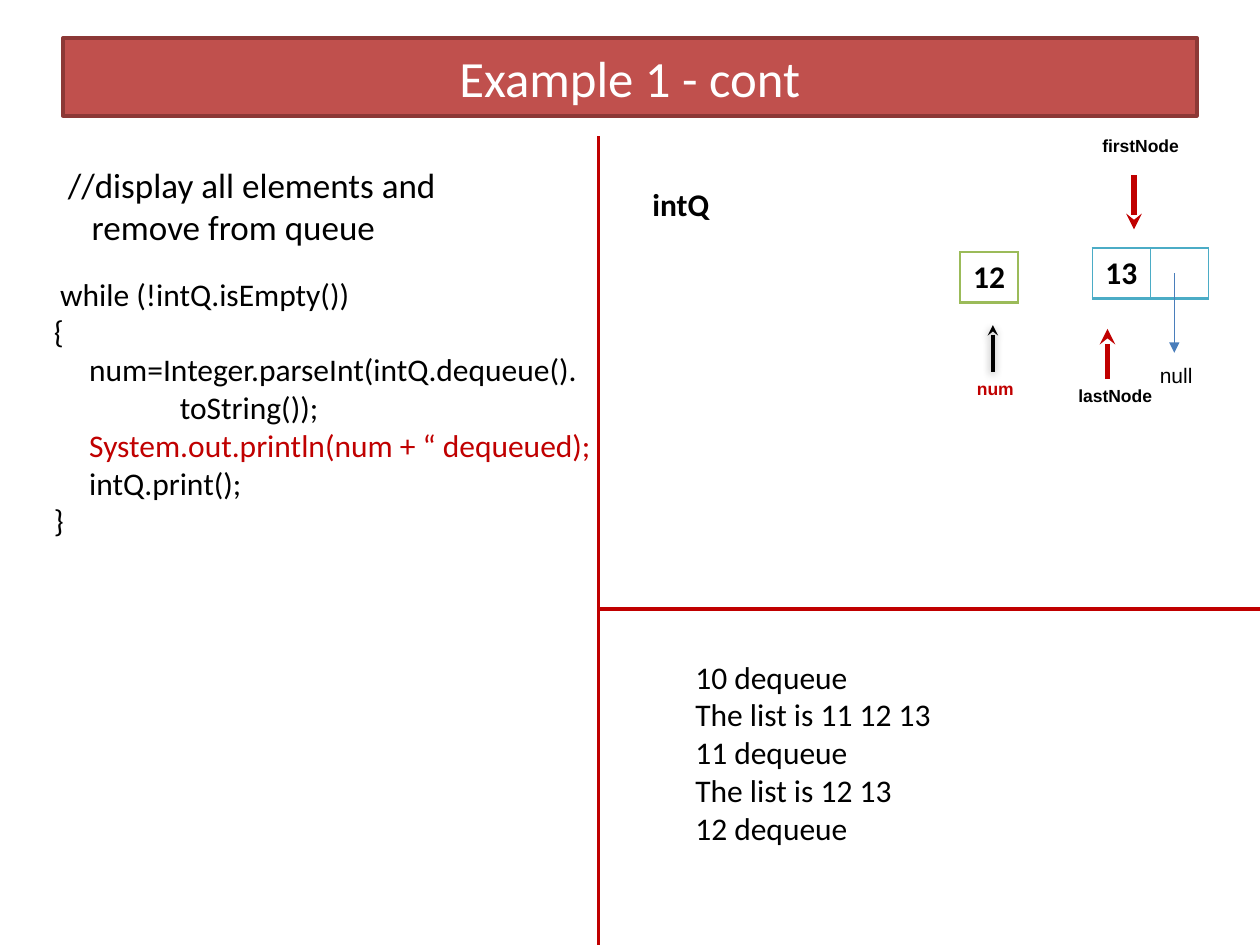
from lxml.etree import SubElement
from pptx import Presentation
from pptx.dml.color import RGBColor
from pptx.enum.shapes import MSO_CONNECTOR, MSO_SHAPE
from pptx.enum.text import MSO_ANCHOR, PP_ALIGN
from pptx.oxml import parse_xml
from pptx.oxml.ns import nsdecls, qn
from pptx.util import Inches, Pt

COLORS = {
    "title": "C0504D", "title_line": "8C3836", "white": "FFFFFF",
    "black": "000000", "red": "C00000", "blue": "4A7EBB",
    "node": "4BACC6", "removed": "9BBB59",
}
CELL_W, CELL_H = 0.46, 0.4


def rgb(name):
    return RGBColor.from_string(COLORS[name])


def style(p, size, color="black", bold=False, font="Calibri", align=PP_ALIGN.LEFT):
    p.alignment = align
    for r in p.runs:
        r.font.name, r.font.size, r.font.bold = font, Pt(size), bold
        r.font.color.rgb = rgb(color)


def indent(p, left, first=0.0):
    pPr = p._p.get_or_add_pPr()
    pPr.set("marL", str(Inches(left)))
    pPr.set("indent", str(Inches(first)))


def add_text(s, x, y, w, h, text, size, wrap=False, **look):
    sp = s.shapes.add_textbox(Inches(x), Inches(y), Inches(w), Inches(h))
    tf = sp.text_frame
    tf.word_wrap = wrap
    tf.text = text
    for p in tf.paragraphs:
        style(p, size, **look)
    return tf


def add_label(s, x, y, w, text, **look):
    add_text(s, x, y, w, 0.27, text, 10, bold=True, font="Arial", **look)


def add_line(s, x1, y1, x2, y2, color, width, head=None, shadow=False):
    ln = s.shapes.add_connector(MSO_CONNECTOR.STRAIGHT, Inches(x1), Inches(y1),
                                Inches(x2), Inches(y2))
    ln.line.color.rgb = rgb(color)
    ln.line.width = Pt(width)
    if head:
        SubElement(ln.line._get_or_add_ln(), qn("a:tailEnd"), type=head)
    effects = SubElement(ln._element.spPr, qn("a:effectLst"))
    if shadow:
        outer = SubElement(effects, qn("a:outerShdw"), blurRad=str(Pt(5)),
                           dist=str(Pt(1.6)), dir="5400000", rotWithShape="0")
        clr = SubElement(outer, qn("a:srgbClr"), val=COLORS["black"])
        SubElement(clr, qn("a:alpha"), val="38000")


def set_borders(cell, color):
    tcPr = cell._tc.get_or_add_tcPr()
    for i, (side, width) in enumerate((("L", 1), ("R", 1), ("T", 1), ("B", 2))):
        tcPr.insert(i, parse_xml(
            f'<a:ln{side} {nsdecls("a")} w="{Pt(width)}"><a:solidFill>'
            f'<a:srgbClr val="{COLORS[color]}"/></a:solidFill></a:ln{side}>'))


def add_node(s, x, y, values, color):
    """A queue node: one row with a cell for each value."""
    tbl = s.shapes.add_table(1, len(values), Inches(x), Inches(y),
                             Inches(CELL_W * len(values)), Inches(CELL_H)).table
    tbl.first_row = tbl.horz_banding = False
    for i, value in enumerate(values):
        tbl.columns[i].width = Inches(CELL_W)
        cell = tbl.cell(0, i)
        cell.fill.background()
        set_borders(cell, color)
        cell.text = value
        style(cell.text_frame.paragraphs[0], 18, bold=True, align=PP_ALIGN.CENTER)


def add_title(s, x, y, w, h):
    sp = s.shapes.add_shape(MSO_SHAPE.RECTANGLE, Inches(x), Inches(y),
                            Inches(w), Inches(h))
    sp.shadow.inherit = False
    sp.fill.solid()
    sp.fill.fore_color.rgb = rgb("title")
    sp.line.color.rgb = rgb("title_line")
    sp.line.width = Pt(2)
    tf = sp.text_frame
    tf.vertical_anchor = MSO_ANCHOR.MIDDLE
    tf.text = "Example 1 - cont"
    style(tf.paragraphs[0], 29, "white", align=PP_ALIGN.CENTER)


def add_dividers(s, x, y, right, bottom, split):
    add_line(s, x, y, x, bottom, "red", 2.25)
    add_line(s, x, split, right, split, "red", 2.25)


def add_code(s, x, y):
    tf = add_text(s, x, y, 3.5, 0.5,
                  "//display all elements and remove from queue", 20, wrap=True)
    indent(tf.paragraphs[0], 0.38, -0.19)
    lines = [
        ("while (!intQ.isEmpty())", 0.05, "black"),
        ("{", 0, "black"),
        ("num=Integer.parseInt(intQ.dequeue().", 0.28, "black"),
        ("toString());", 1, "black"),
        ("System.out.println(num + “ dequeued);", 0.28, "red"),
        ("intQ.print();", 0.28, "black"),
        ("}", 0, "black"),
    ]
    tf = add_text(s, x + 0.08, y + 0.88, 4.54, 2.52,
                  "\n".join(text for text, _, _ in lines), 18, wrap=True)
    for p, (_, left, color) in zip(tf.paragraphs, lines):
        indent(p, left)
        style(p, 18, color)


def add_queue(s, x, y):
    """The queue diagram, with its top left corner at x, y."""
    add_text(s, x, y + 0.4, 0.66, 0.4, "intQ", 18, bold=True)

    add_node(s, x + 2.54, y + 0.98, ["12"], "removed")
    add_label(s, x + 2.47, y + 1.93, 0.7, "num", color="red", align=PP_ALIGN.CENTER)
    add_line(s, x + 2.8, y + 1.93, x + 2.8, y + 1.56, "black", 2, "stealth", shadow=True)

    add_node(s, x + 3.59, y + 0.95, ["13", ""], "node")
    add_line(s, x + 4.24, y + 1.15, x + 4.24, y + 1.78, "blue", 0.75, "triangle")
    add_text(s, x + 3.92, y + 1.81, 0.67, 0.3, "null", 12, font="Arial",
             align=PP_ALIGN.CENTER)
    add_label(s, x + 3.57, y, 0.95, "firstNode")
    add_line(s, x + 3.92, y + 0.37, x + 3.92, y + 0.8, "red", 3, "stealth")
    add_label(s, x + 3.38, y + 1.99, 0.95, "lastNode")
    add_line(s, x + 3.71, y + 1.99, x + 3.71, y + 1.59, "red", 3, "stealth")


def add_output(s, x, y, w, h):
    lines = ["10 dequeue", "The list is 11 12 13", "11 dequeue",
             "The list is 12 13", "12 dequeue"]
    add_text(s, x, y, w, h, "\n".join(lines), 18)


def main():
    prs = Presentation()
    prs.slide_width, prs.slide_height = Inches(10), Inches(7.5)
    s = prs.slides.add_slide(prs.slide_layouts[6])
    add_title(s, 0.5, 0.3, 9, 0.62)
    add_dividers(s, 4.75, 1.08, 10, 7.5, split=4.83)
    add_code(s, 0.25, 1.25)
    add_queue(s, 5.08, 1.02)
    add_output(s, 5.42, 5.17, 2.09, 1.92)
    prs.save("out.pptx")


if __name__ == "__main__":
    main()
